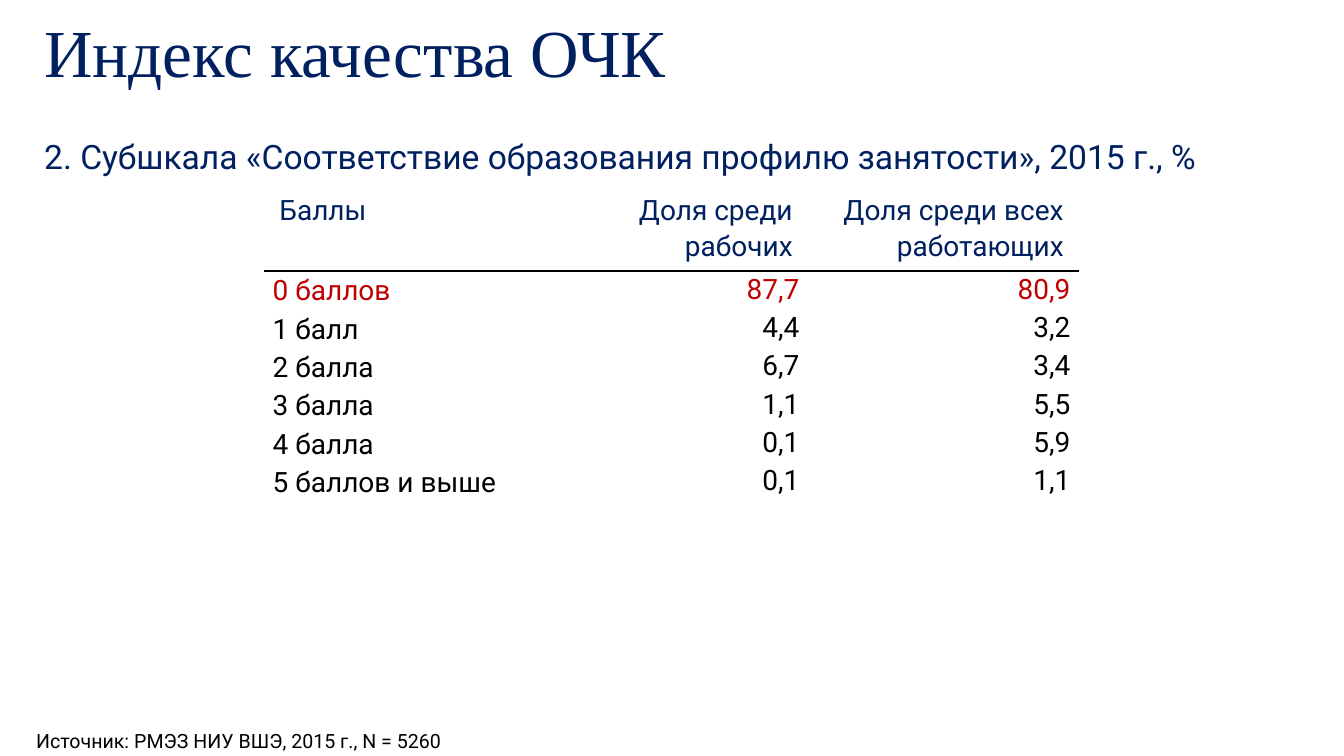
from dataclasses import dataclass
from lxml.etree import SubElement
from pptx import Presentation
from pptx.dml.color import RGBColor
from pptx.enum.text import MSO_ANCHOR, MSO_AUTO_SIZE, PP_ALIGN
from pptx.oxml import parse_xml
from pptx.oxml.ns import nsdecls, qn
from pptx.util import Cm, Pt


@dataclass(frozen=True)
class Theme:
    navy: str = "002060"
    red: str = "C00000"
    black: str = "000000"
    heading_font: str = "Times New Roman"
    text_font: str = "Roboto"
    title: int = 48
    subtitle: int = 24
    table: int = 20
    source: int = 14


theme = Theme()


def write(tf, text, size, color, font=theme.text_font, align=PP_ALIGN.LEFT):
    tf.text = text
    tf.word_wrap = True
    p = tf.paragraphs[0]
    p.alignment = align
    p.font.name = font
    p.font.size = Pt(size)
    p.font.color.rgb = RGBColor.from_string(color)
    return p


def place(sp, left, top, width, height):
    sp.left, sp.top, sp.width, sp.height = Cm(left), Cm(top), Cm(width), Cm(height)


prs = Presentation()
prs.slide_width, prs.slide_height = Cm(33.87), Cm(19.05)
s = prs.slides.add_slide(prs.slide_layouts[1])

title = s.shapes.title
place(title, 0.86, 0.43, 29.21, 1.96)
p = write(title.text_frame, "Индекс качества ОЧК", theme.title, theme.navy, theme.heading_font)
p.line_spacing = 0.9
title.text_frame.vertical_anchor = MSO_ANCHOR.MIDDLE
title.text_frame.auto_size = MSO_AUTO_SIZE.NONE

body = s.placeholders[1]
place(body, 0.86, 3.3, 32.21, 1.17)
p = write(body.text_frame, "2. Субшкала «Соответствие образования профилю занятости», 2015 г., %",
          theme.subtitle, theme.navy)
p.space_before = Pt(10)
body.text_frame.auto_size = MSO_AUTO_SIZE.NONE
pPr = p._p.get_or_add_pPr()
pPr.set("marL", "0")
pPr.set("indent", "0")
pPr.insert_element_before(parse_xml(f"<a:buNone {nsdecls('a')}/>"), "a:tabLst", "a:defRPr", "a:extLst")

rows = [
    ("Баллы", "Доля среди рабочих", "Доля среди всех работающих"),
    ("0 баллов", "87,7", "80,9"),
    ("1 балл", "4,4", "3,2"),
    ("2 балла", "6,7", "3,4"),
    ("3 балла", "1,1", "5,5"),
    ("4 балла", "0,1", "5,9"),
    ("5 баллов и выше", "0,1", "1,1"),
]
row_colors = {0: theme.navy, 1: theme.red}
header_rule = {0: "a:lnB", 1: "a:lnT"}

table = s.shapes.add_table(len(rows), 3, Cm(6.68), Cm(4.85), Cm(20.49), Cm(7.77)).table
table.first_row = table.horz_banding = False
for i, row in enumerate(rows):
    table.rows[i].height = Cm(0.965 if i else 1.98)
    for j, text in enumerate(row):
        cell = table.cell(i, j)
        cell.margin_left = cell.margin_right = Cm(0.19 if i else 0.36)
        cell.margin_top = cell.margin_bottom = 0
        cell.vertical_anchor = MSO_ANCHOR.MIDDLE if i and j == 0 else MSO_ANCHOR.TOP
        cell.fill.background()
        p = write(cell.text_frame, text, theme.table, row_colors.get(i, theme.black),
                  align=PP_ALIGN.RIGHT if j else PP_ALIGN.LEFT)
        p.line_spacing = 1.07
        if i in header_rule:
            tcPr = cell._tc.get_or_add_tcPr()
            ln = SubElement(tcPr, qn(header_rule[i]), w=str(Pt(1)))
            SubElement(SubElement(ln, qn("a:solidFill")), qn("a:srgbClr"), val=theme.black)
            tcPr.insert(0, ln)

source = s.shapes.add_textbox(Cm(0.66), Cm(18.24), Cm(33.2), Cm(0.81))
write(source.text_frame, "Источник: РМЭЗ НИУ ВШЭ, 2015 г., N = 5260", theme.source, theme.black)

prs.save("out.pptx")
